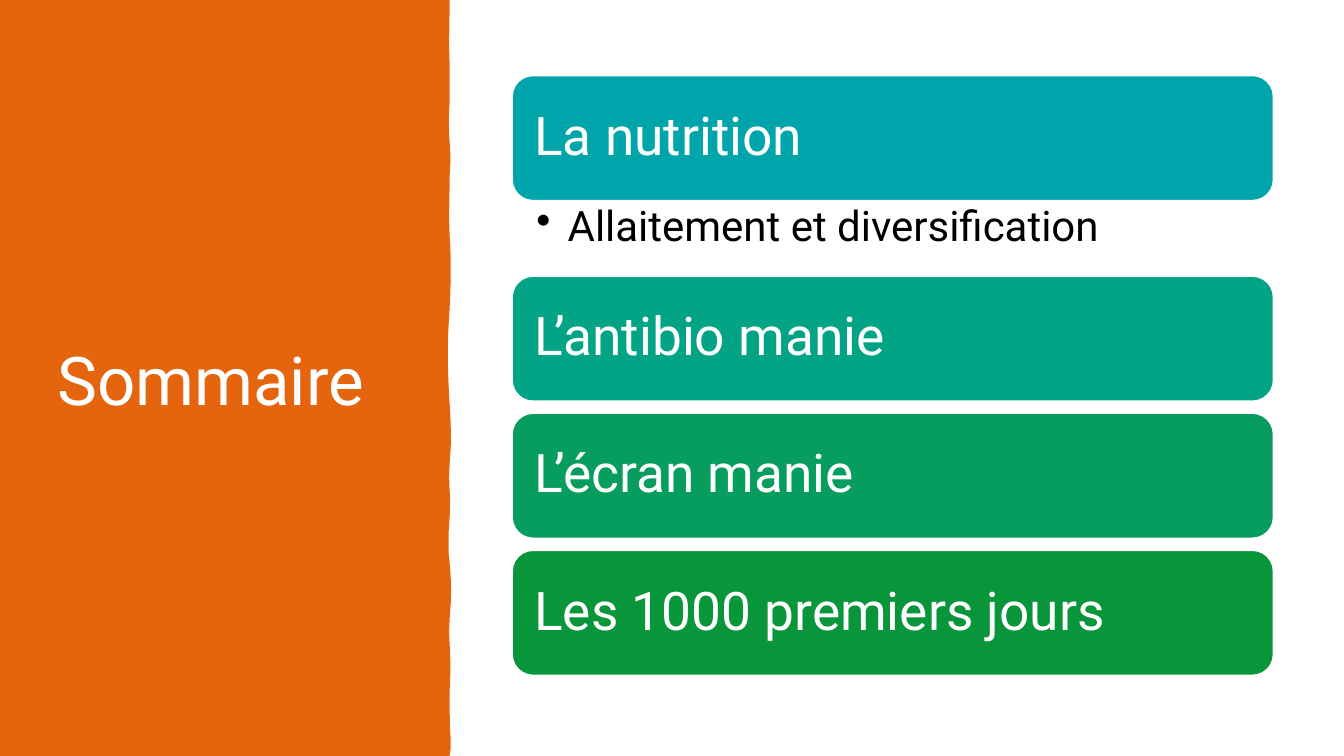
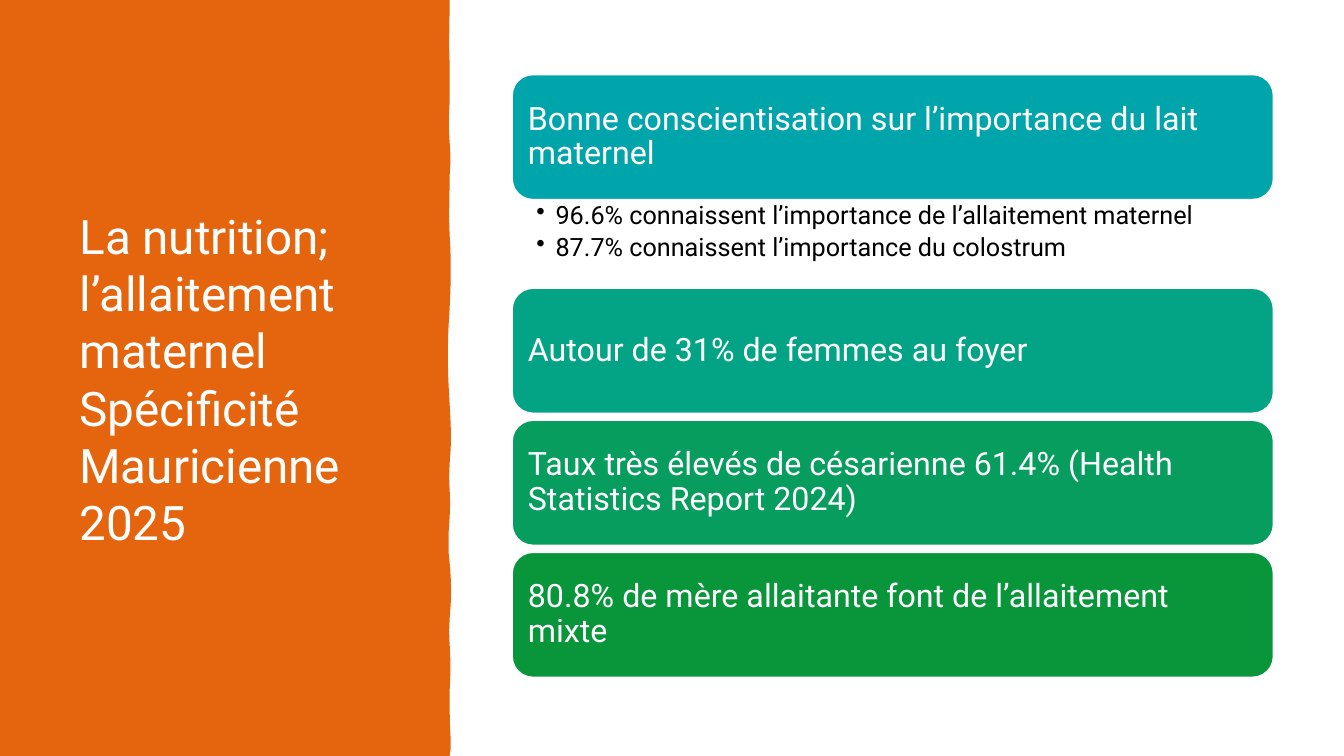
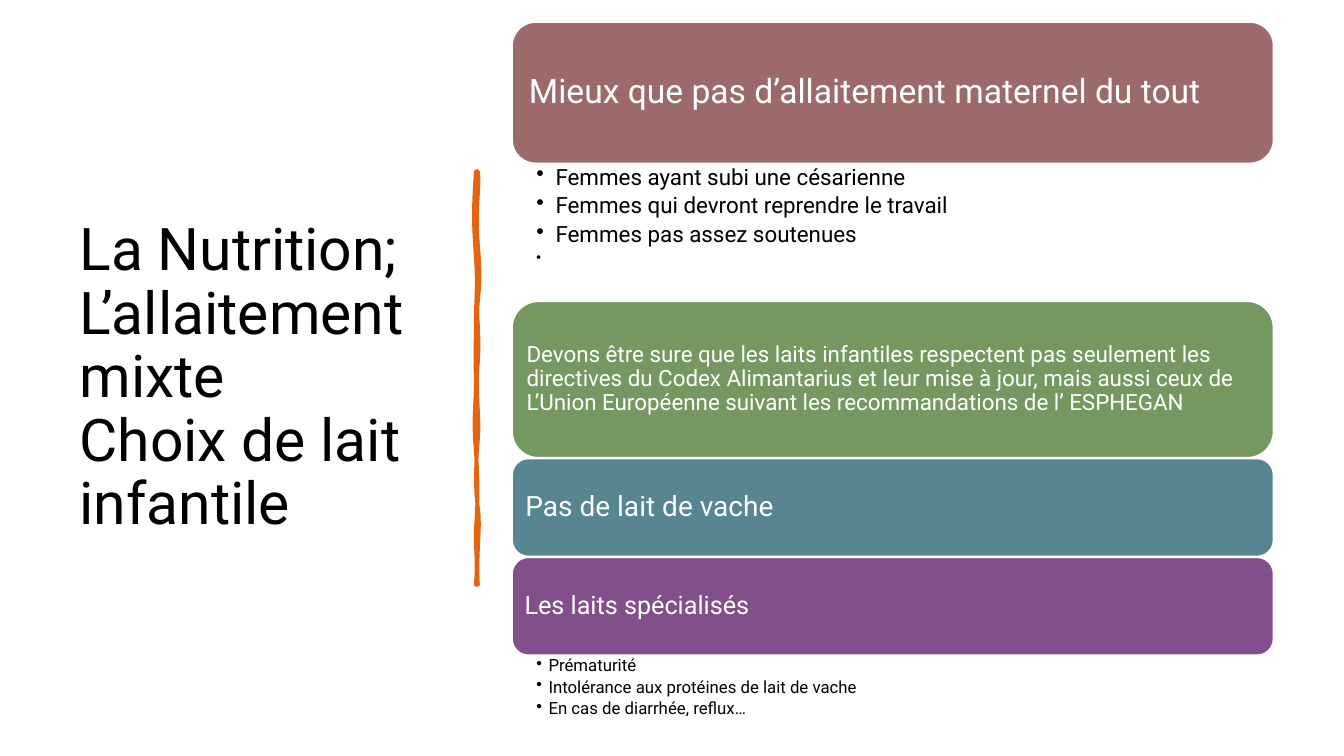
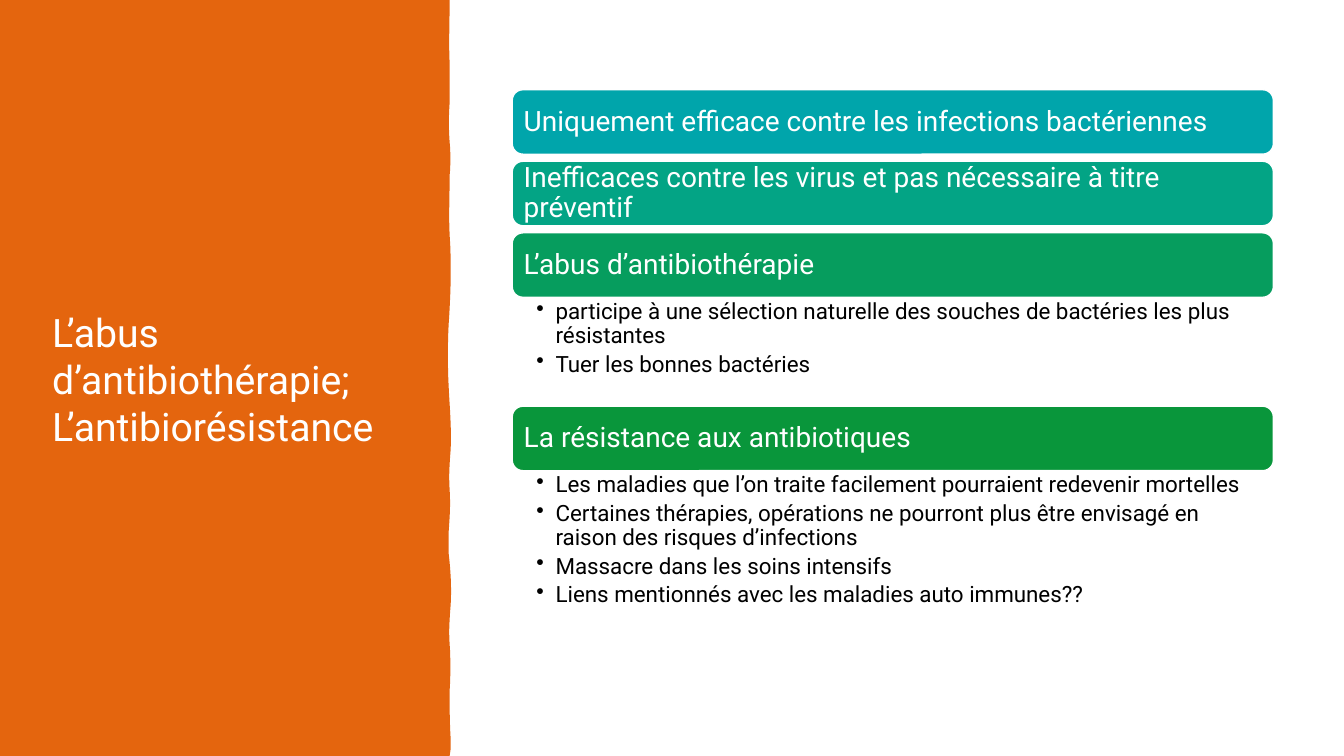
from lxml.etree import SubElement as Sub
from pptx import Presentation
from pptx.dml.color import RGBColor as RGB
from pptx.enum.shapes import MSO_SHAPE as Shape
from pptx.enum.text import MSO_ANCHOR as Anchor, PP_ALIGN as Align
from pptx.oxml.ns import qn
from pptx.util import Inches, Pt

FONT = "Roboto"
WHITE = RGB(0xFF, 0xFF, 0xFF)
BLACK = RGB(0, 0, 0)
ORANGE = RGB(0xE4, 0x65, 0x0E)
GREENS = [RGB(0x00, 0xA5, 0xAB), RGB(0x03, 0xA4, 0x85),
          RGB(0x06, 0x9D, 0x5E), RGB(0x09, 0x96, 0x3B)]
MIXED = [RGB(0x9C, 0x6A, 0x6A), RGB(0x76, 0x98, 0x60),
         RGB(0x57, 0x85, 0x92), RGB(0x82, 0x4F, 0x8C)]

WIDE, HIGH = 13.33, 7.5
LEFT, SPAN = 5.08, 7.55  # column of cards
TAB = "\t"

# Curves: a start point, then cubic pieces (two controls, one end).
EDGE = [(4.46, 0),
        (4.46, 0.21, 4.45, 0.42, 4.46, 0.63), (4.46, 0.76, 4.46, 0.89, 4.46, 1.02),
        (4.45, 1.15, 4.45, 1.28, 4.46, 1.41), (4.47, 1.52, 4.47, 1.63, 4.46, 1.74),
        (4.46, 1.94, 4.45, 2.14, 4.46, 2.33), (4.48, 2.63, 4.47, 2.93, 4.45, 3.22),
        (4.44, 3.42, 4.44, 3.63, 4.45, 3.83), (4.46, 4.04, 4.48, 4.25, 4.47, 4.46),
        (4.46, 4.59, 4.45, 4.72, 4.46, 4.86), (4.47, 5, 4.46, 5.14, 4.45, 5.28),
        (4.45, 5.35, 4.45, 5.42, 4.45, 5.49), (4.47, 5.66, 4.48, 5.83, 4.47, 6),
        (4.46, 6.13, 4.45, 6.26, 4.46, 6.39), (4.47, 6.54, 4.47, 6.69, 4.46, 6.85),
        (4.46, 7.01, 4.46, 7.17, 4.47, 7.33), (4.47, 7.37, 4.47, 7.4, 4.47, 7.43)]
BRUSH = [(4.74, 1.7),
         (4.76, 1.86, 4.71, 2.07, 4.74, 2.43), (4.77, 2.79, 4.75, 2.85, 4.74, 2.99),
         (4.72, 3.13, 4.76, 3.31, 4.74, 3.59), (4.71, 3.87, 4.76, 4.13, 4.74, 4.36),
         (4.72, 4.58, 4.71, 4.85, 4.74, 5.04), (4.77, 5.23, 4.72, 5.48, 4.74, 5.8),
         (4.73, 5.8, 4.73, 5.8, 4.72, 5.8),
         (4.74, 5.54, 4.71, 5.36, 4.72, 5.24), (4.73, 5.13, 4.75, 4.83, 4.72, 4.48),
         (4.69, 4.13, 4.72, 4.06, 4.72, 3.75), (4.71, 3.45, 4.72, 3.41, 4.72, 3.19),
         (4.72, 2.98, 4.74, 2.85, 4.72, 2.55), (4.7, 2.26, 4.69, 2.12, 4.72, 1.7)]


def trace(curve, steps=8):
    """Return points along a chain of cubic curves."""
    x, y = curve[0]
    dots = [(x, y)]
    for a, b, c, d, e, f in curve[1:]:
        for i in range(1, steps + 1):
            t = i / steps
            u = 1 - t
            dots.append(tuple(
                u**3 * p + 3 * u * u * t * q + 3 * u * t * t * r + t**3 * s
                for p, q, r, s in ((x, a, c, e), (y, b, d, f))))
        x, y = e, f
    return dots


def fill(shape, color, edge=None, thick=1):
    shape.shadow.inherit = False
    shape.fill.solid()
    shape.fill.fore_color.rgb = color
    if edge is None:
        shape.line.fill.background()
    else:
        shape.line.color.rgb = edge
        shape.line.width = Pt(thick)


def outline(slide, dots, **style):
    dots = [(Inches(x), Inches(y)) for x, y in dots]
    pen = slide.shapes.build_freeform(*dots[0])
    pen.add_line_segments(dots[1:], close=True)
    fill(pen.convert_to_shape(), **style)


def band(slide):
    outline(slide, [(0, 0)] + trace(EDGE) + [(4.46, HIGH), (0, HIGH)], color=ORANGE)


def brush(slide):
    outline(slide, trace(BRUSH), color=ORANGE, edge=ORANGE, thick=2.75)


def write(shape, lines, size, color=WHITE, pads=(0.1, 0.05, 0.1, 0.05),
          anchor=Anchor.MIDDLE, pitch=0.9, hang=None):
    """Fill a shape with paragraphs; a hang in inches makes them bullets."""
    frame = shape.text_frame
    frame.word_wrap = True
    frame.vertical_anchor = anchor
    (frame.margin_left, frame.margin_top,
     frame.margin_right, frame.margin_bottom) = map(Inches, pads)
    for i, line in enumerate(lines):
        para = frame.add_paragraph() if i else frame.paragraphs[0]
        para.alignment = Align.LEFT
        para.line_spacing = pitch
        if hang:
            para.space_after = Pt(round(size * 0.2, 1))
            props = para._p.get_or_add_pPr()
            props.set("marL", str(Inches(hang)))
            props.set("indent", str(-Inches(hang)))
            Sub(props, qn("a:buChar")).set("char", "•")
        para.text = line
        for run in para.runs:
            run.font.name = FONT
            run.font.size = Pt(10 if line == TAB else size)
            run.font.color.rgb = color


def box(slide, *place):
    return slide.shapes.add_textbox(*map(Inches, place))


def title(slide, text, left, width, size, **style):
    write(box(slide, left, 0.7, width, 6.11), [text], size, **{"pitch": 1, **style})


def card(slide, top, high, text, size, color):
    shape = slide.shapes.add_shape(
        Shape.ROUNDED_RECTANGLE, *map(Inches, (LEFT, top, SPAN, high)))
    fill(shape, color, WHITE)
    write(shape, [text], size, pads=[size / 240] * 4)


def points(slide, top, high, lines, size, hang):
    rim = size / 600
    write(box(slide, LEFT, top, SPAN, high), lines, size, BLACK,
          pads=(0.24, rim, size / 100, rim), anchor=Anchor.TOP, hang=hang)


def stack(slide, top, gap, colors, items):
    """Pile up cards (height, text, size), each with an optional list
    (height, lines, size, hang) right below it that replaces the gap."""
    for color, (high, text, size, *rest) in zip(colors, items):
        card(slide, top, high, text, size, color)
        top += high
        if rest:
            points(slide, top, *rest)
            top += rest[0]
        else:
            top += gap


def summary(slide):
    band(slide)
    title(slide, "Sommaire", 0.47, 3.62, 48)
    high, size = 1.24, 38
    stack(slide, 0.75, 0.12, GREENS, [
        (high, "La nutrition", size,
         0.75, ["Allaitement et diversification"], 30, 0.31),
        (high, "L’antibio manie", size),
        (high, "L’écran manie", size),
        (high, "Les 1000 premiers jours", size)])


def feeding(slide):
    band(slide)
    title(slide, "La nutrition; l’allaitement maternel\vSpécificité Mauricienne 2025",
          0.69, 3.39, 34)
    high, size = 1.24, 23
    stack(slide, 0.74, 0.07, GREENS, [
        (high, "Bonne conscientisation sur l’importance du lait maternel", size,
         0.88, ["96.6% connaissent l’importance de l’allaitement maternel",
                "87.7% connaissent l’importance du colostrum"], 18, 0.19),
        (high, "Autour de 31% de femmes au foyer", size),
        (high, "Taux très élevés de césarienne 61.4% (Health Statistics Report 2024)", size),
        (high, "80.8% de mère allaitante font de l’allaitement mixte", size)])


def milk(slide):
    title(slide, "La Nutrition; L’allaitement mixte\vChoix de lait infantile",
          0.69, 3.74, 42, color=BLACK, pitch=0.9)
    brush(slide)
    stack(slide, 0.22, 0.01, MIXED, [
        (1.4, "Mieux que pas d’allaitement maternel du tout", 24,
         1.37, ["Femmes ayant subi une césarienne",
                "Femmes qui devront reprendre le travail",
                "Femmes pas assez soutenues", TAB], 16, 0.19),
        (1.55, "Devons être sure que les laits infantiles respectent pas seulement "
               "les directives du Codex Alimantarius et leur mise à jour, mais aussi "
               "ceux de L’Union Européenne suivant les recommandations de l’ ESPHEGAN", 16),
        (0.97, "Pas de lait de vache", 20),
        (0.97, "Les laits spécialisés", 18,
         0.82, ["Prématurité", "Intolérance aux protéines de lait de vache",
                "En cas de diarrhée, reflux…"], 12, 0.12)])


def abuse(slide):
    band(slide)
    title(slide, "L’abus d’antibiothérapie;\vL’antibiorésistance", 0.42, 3.84, 28)
    high, size = 0.64, 20
    stack(slide, 0.89, 0.07, GREENS, [
        (high, "Uniquement efficace contre les infections bactériennes", size),
        (high, "Inefficaces contre les virus et pas nécessaire à titre préventif", size),
        (high, "L’abus d’antibiothérapie", size,
         1.08, ["participe à une sélection naturelle des souches de bactéries "
                "les plus résistantes", "Tuer les bonnes bactéries"], 16, 0.19),
        (high, "La résistance aux antibiotiques", size,
         1.9, ["Les maladies que l’on traite facilement pourraient redevenir mortelles",
               "Certaines thérapies, opérations ne pourront plus être envisagé en "
               "raison des risques d’infections",
               "Massacre dans les soins intensifs",
               "Liens mentionnés avec les maladies auto immunes??"], 16, 0.19)])


def main():
    deck = Presentation()
    deck.slide_width, deck.slide_height = Inches(WIDE), Inches(HIGH)
    for draw in (summary, feeding, milk, abuse):
        draw(deck.slides.add_slide(deck.slide_layouts[6]))
    deck.save("out.pptx")


if __name__ == "__main__":
    main()
